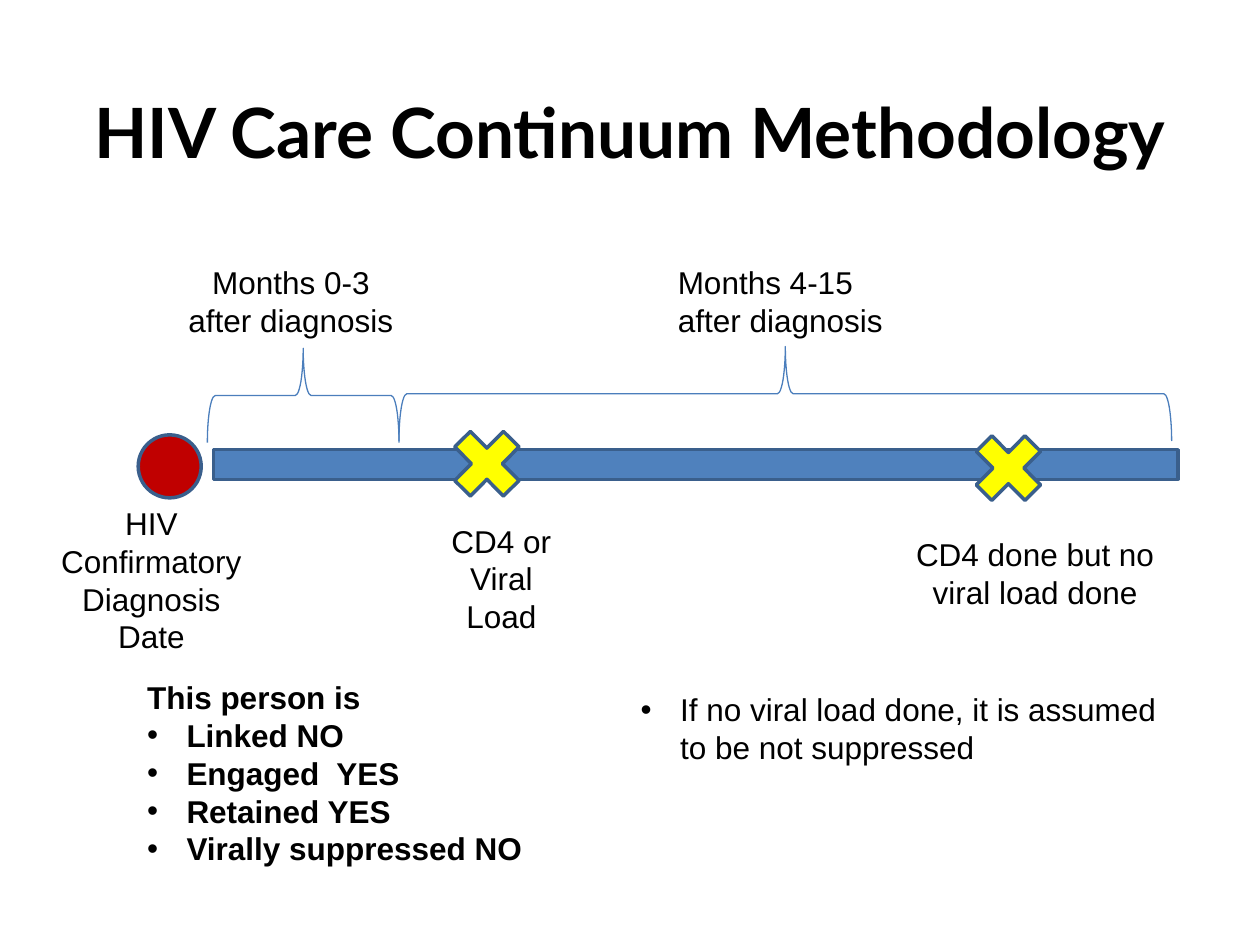
import pptx
import pptx.util
import pptx.dml.color
import pptx.enum.shapes
import pptx.enum.text
import pptx.oxml.ns
from lxml import etree

Pt = pptx.util.Pt
SHAPES = pptx.enum.shapes.MSO_SHAPE
ALIGN = pptx.enum.text.PP_ALIGN
ANCHOR = pptx.enum.text.MSO_ANCHOR

COLORS = {"text": "000000", "bar": "4F81BD", "outline": "3A5F8C",
          "brace": "4B7EBC", "diagnosis": "C00000", "test": "FFFF00"}
INDENT = 22.5

TITLE = ("HIV Care Continuum Methodology", (12, 36, 696, 78))

# Preset, box (left, top, width, height), fill
TIMELINE = [
    (SHAPES.MATH_MINUS, (22.5, 229.5, 750, 72), "bar"),
    (SHAPES.FLOWCHART_CONNECTOR, (79, 248.5, 36, 36), "diagnosis"),
]
TESTS = [
    (SHAPES.MATH_MULTIPLY, (251.5, 238, 53.5, 54), "test"),
    (SHAPES.MATH_MULTIPLY, (549.5, 240.5, 53.5, 54), "test"),
]

# Visible left, top and width of each period's brace
BRACES = [(118.5, 199, 109.5), (228, 198, 441.5)]
BRACE_HEIGHT = 54

# Text, box, alignment
LABELS = [
    ("HIV Confirmatory Diagnosis Date", (22.5, 284.5, 128, 94.5), ALIGN.CENTER),
    ("Months 0-3 after diagnosis", (94.5, 147, 143.5, 51), ALIGN.CENTER),
    ("Months 4-15 after diagnosis", (380.25, 147, 132.25, 51), ALIGN.LEFT),
    ("CD4 or Viral Load", (250.5, 294.5, 72, 72.5), ALIGN.CENTER),
    ("CD4 done but no viral load done", (513.5, 302, 156, 51), ALIGN.CENTER),
]

# Heading, bulleted lines, box, bold
NOTES = [
    ("This person is",
     ["Linked NO", "Engaged  YES", "Retained YES", "Virally suppressed NO"],
     (77, 384, 295, 116.5), True),
    (None, ["If no viral load done, it is assumed to be not suppressed"],
     (359, 391, 311, 51), False),
]


def color(name):
    return pptx.dml.color.RGBColor.from_string(COLORS[name])


def add_shape(slide, preset, box, fill, line, width):
    shape = slide.shapes.add_shape(preset, *map(Pt, box))
    shape.shadow.inherit = False
    if fill:
        shape.fill.solid()
        shape.fill.fore_color.rgb = color(fill)
    else:
        shape.fill.background()
    shape.line.color.rgb = color(line)
    shape.line.width = Pt(width)
    return shape


def add_brace(slide, left, top, width):
    """Place a left brace so that a quarter turn fills the visible box."""
    shift = (width - BRACE_HEIGHT) / 2
    box = (left + shift, top - shift, BRACE_HEIGHT, width)
    brace = add_shape(slide, SHAPES.LEFT_BRACE, box, None, "brace", 0.75)
    brace.rotation = 90


def add_bullet(paragraph):
    properties = paragraph._p.get_or_add_pPr()
    properties.set("marL", str(Pt(INDENT)))
    properties.set("indent", str(-Pt(INDENT)))
    for tag, key, value in (("a:buFont", "typeface", "Arial"),
                            ("a:buChar", "char", "•")):
        element = etree.SubElement(properties, pptx.oxml.ns.qn(tag))
        element.set(key, value)


def add_text(slide, lines, box, align=ALIGN.LEFT, bold=False, font="Arial",
             size=18, anchor=ANCHOR.TOP):
    """Add a text box from (text, bulleted) lines."""
    frame = slide.shapes.add_textbox(*map(Pt, box)).text_frame
    frame.word_wrap = True
    frame.vertical_anchor = anchor
    for index, (text, bulleted) in enumerate(lines):
        paragraph = frame.add_paragraph() if index else frame.paragraphs[0]
        paragraph.alignment = align
        if bulleted:
            add_bullet(paragraph)
        run = paragraph.add_run()
        run.text = text
        run.font.name = font
        run.font.size = Pt(size)
        run.font.bold = bold
        run.font.color.rgb = color("text")


def main():
    presentation = pptx.Presentation()
    presentation.slide_width, presentation.slide_height = Pt(720), Pt(540)
    slide = presentation.slides.add_slide(presentation.slide_layouts[6])

    title, title_box = TITLE
    add_text(slide, [(title, False)], title_box, ALIGN.CENTER, True,
             "Lato", 39.6, ANCHOR.MIDDLE)
    for preset, box, fill in TIMELINE + TESTS:
        add_shape(slide, preset, box, fill, "outline", 2)
    for brace in BRACES:
        add_brace(slide, *brace)
    for text, box, align in LABELS:
        add_text(slide, [(text, False)], box, align)
    for heading, bullets, box, bold in NOTES:
        lines = [(heading, False)] if heading else []
        lines += [(bullet, True) for bullet in bullets]
        add_text(slide, lines, box, bold=bold)

    presentation.save("out.pptx")


if __name__ == "__main__":
    main()
